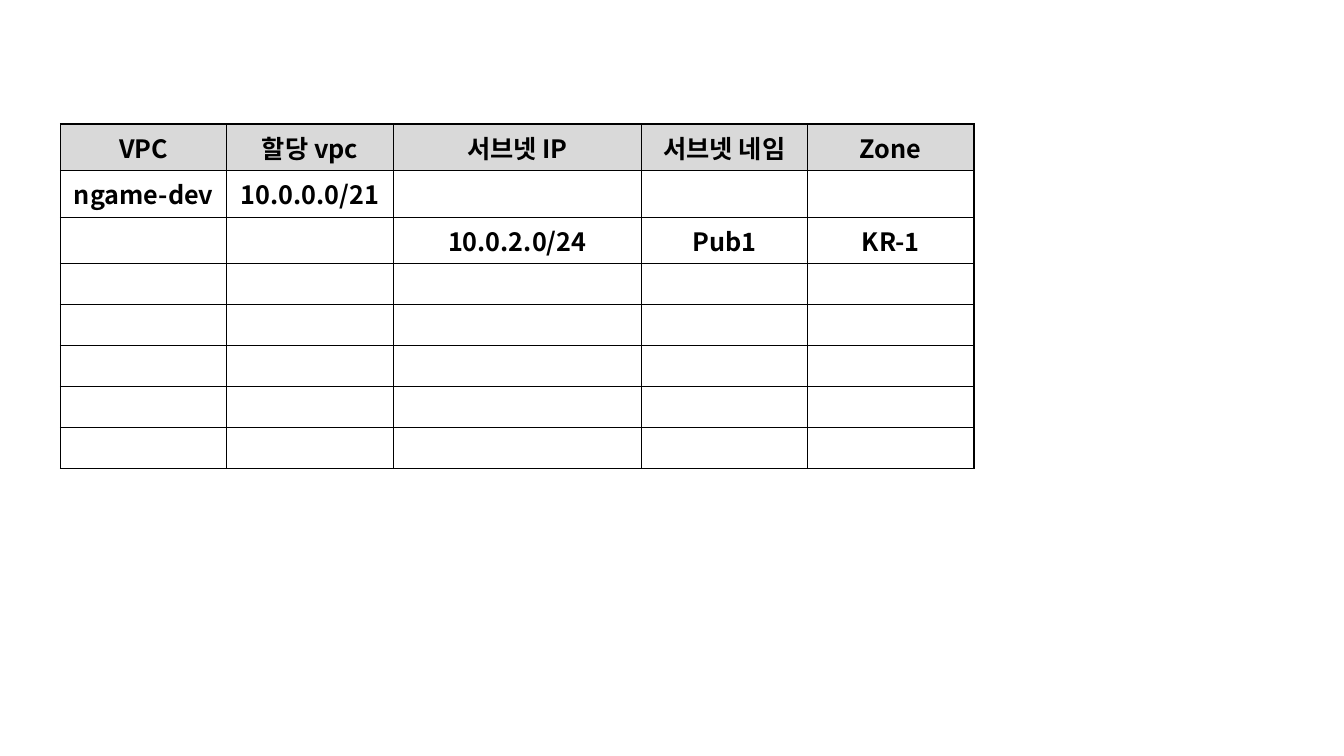
from dataclasses import dataclass

from lxml import etree
from pptx import Presentation
from pptx import util as u
from pptx.dml.color import RGBColor
from pptx.enum import text
from pptx.oxml.ns import qn


@dataclass(frozen=True)
class Theme:
    font: str = "Noto Sans CJK KR"
    size: float = 18
    ink: str = "000000"
    head: str = "D9D9D9"
    pale: str = "FFFFFF"
    veil: int = 16  # opacity of the pale rows, in percent
    rule: float = 1


THEME = Theme()

# Grid of the table, in inches
LEFT, TOP = 0.6, 1.23
COLS = [1.65, 1.65, 2.46, 1.65, 1.65]
ROWS = [0.46] * 3 + [0.39] * 5
PALE_ROW = 5  # first row with a pale fill

HEAD = ["VPC", "할당 vpc", "서브넷 IP", "서브넷 네임", "Zone"]
BODY = [
    ["ngame-dev", "10.0.0.0/21", "", "", ""],
    ["", "", "10.0.2.0/24", "Pub1", "KR-1"],
]


def set_edges(cell):
    """Draw a thin line on all four sides of a cell."""
    props = cell._tc.get_or_add_tcPr()
    for place, side in enumerate(("lnL", "lnR", "lnT", "lnB")):
        line = etree.Element(qn(f"a:{side}"), w=str(u.Pt(THEME.rule)))
        fill = etree.SubElement(line, qn("a:solidFill"))
        etree.SubElement(fill, qn("a:srgbClr"), val=THEME.ink)
        props.insert(place, line)


def set_fill(cell, row):
    """Grey for the head, a faint white for the last rows, else none."""
    if 0 < row < PALE_ROW:
        cell.fill.background()
        return
    cell.fill.solid()
    tone = THEME.pale if row else THEME.head
    cell.fill.fore_color.rgb = RGBColor.from_string(tone)
    if row:
        color = cell._tc.tcPr.find(f".//{qn('a:solidFill')}/{qn('a:srgbClr')}")
        etree.SubElement(color, qn("a:alpha"), val=str(THEME.veil * 1000))


def set_text(cell, words):
    """Write centred bold words in the theme font."""
    cell.vertical_anchor = text.MSO_ANCHOR.MIDDLE
    para = cell.text_frame.paragraphs[0]
    para.alignment = text.PP_ALIGN.CENTER
    run = para.add_run()
    run.text = words
    for font in (para.font, run.font):
        font.name = THEME.font
        font.size = u.Pt(THEME.size)
        font.bold = True
        font.color.rgb = RGBColor.from_string(THEME.ink)
    # Hangul takes its face from the East Asian slot
    etree.SubElement(run.font._element, qn("a:ea"), typeface=THEME.font)


def add_grid(slide):
    """Add the subnet table."""
    frame = slide.shapes.add_table(
        len(ROWS), len(COLS), u.Inches(LEFT), u.Inches(TOP),
        u.Inches(sum(COLS)), u.Inches(sum(ROWS)))
    table = frame.table
    table.first_row = table.horz_banding = False
    for col, width in zip(table.columns, COLS):
        col.width = u.Inches(width)
    for row, height in zip(table.rows, ROWS):
        row.height = u.Inches(height)

    lines = [HEAD] + BODY
    for r, row in enumerate(table.rows):
        for c, cell in enumerate(row.cells):
            set_fill(cell, r)
            set_edges(cell)
            if r < len(lines) and lines[r][c]:
                set_text(cell, lines[r][c])


def main():
    deck = Presentation()
    deck.slide_width, deck.slide_height = u.Inches(13.33), u.Inches(7.5)
    slide = deck.slides.add_slide(deck.slide_layouts[6])
    add_grid(slide)
    deck.save("out.pptx")


if __name__ == "__main__":
    main()
